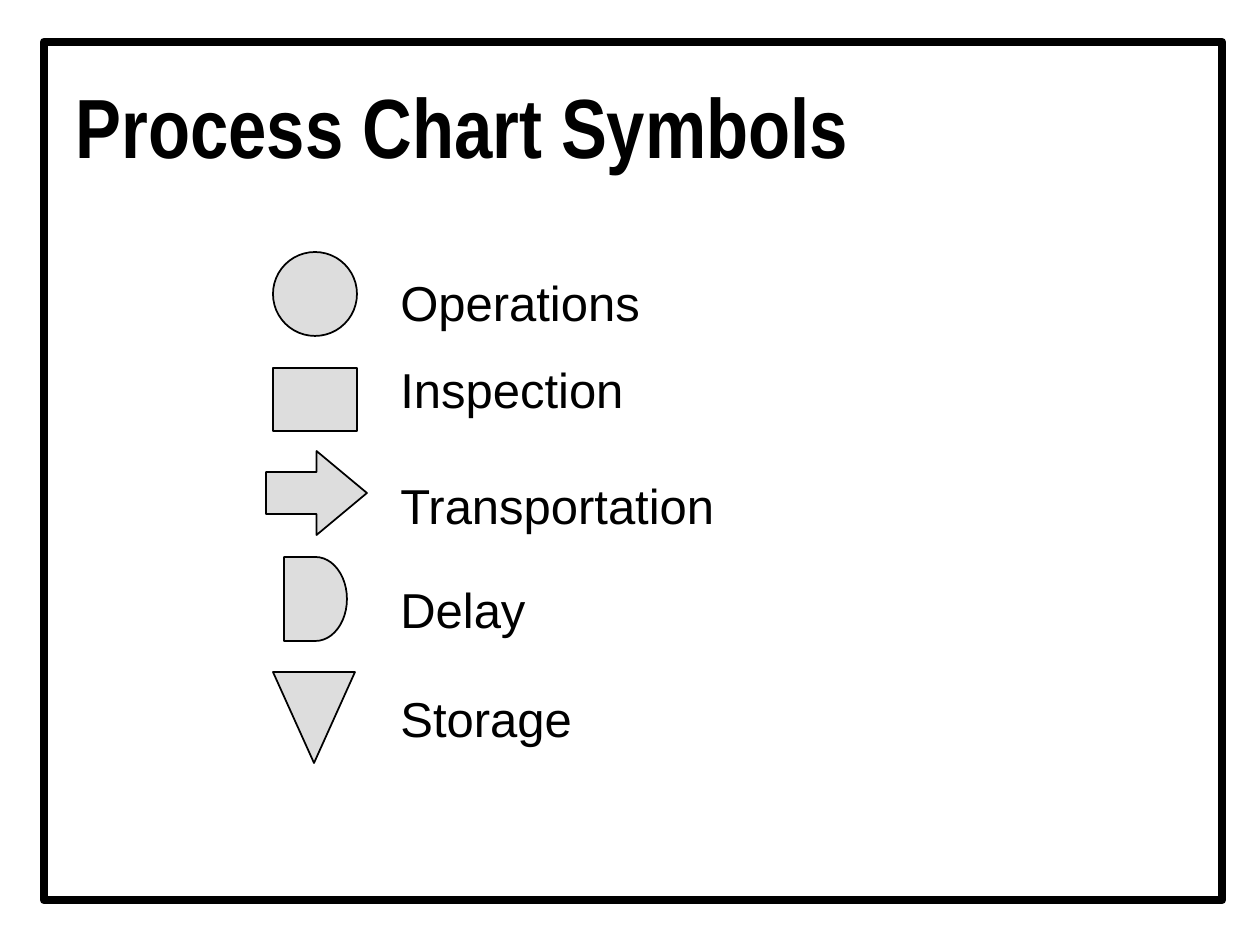
"""Builds the slide of process chart symbols."""
import dataclasses

import pptx
import pptx.dml.color
import pptx.enum.shapes
import pptx.enum.text
import pptx.util

PX = 914400 / 126
SHAPE = pptx.enum.shapes.MSO_SHAPE
ALIGN = pptx.enum.text.PP_ALIGN
ANCHOR = pptx.enum.text.MSO_ANCHOR
AUTO = pptx.enum.text.MSO_AUTO_SIZE
LABEL_LEFT, LABEL_HEIGHT = 388, 73


@dataclasses.dataclass(frozen=True)
class Theme:
    """Colours, fonts and sizes of the slide."""
    ink: str = "000000"
    symbol: str = "DDDDDD"
    title_font: str = "Arial Narrow"
    label_font: str = "Arial"
    title_size: int = 48
    label_size: int = 28
    frame_line: int = 5
    symbol_line: int = 1


THEME = Theme()

SYMBOLS = [
    ("Operations", SHAPE.OVAL, (273, 252, 84, 84), 0, 266, 267),
    ("Inspection", SHAPE.RECTANGLE, (273, 368, 84, 63), 0, 353, 251),
    ("Transportation", SHAPE.RIGHT_ARROW, (266, 451, 101, 84), 0, 469, 344),
    ("Delay", SHAPE.FLOWCHART_DELAY, (284, 557, 63, 84), 0, 573, 152),
    ("Storage", SHAPE.ISOSCELES_TRIANGLE, (273, 672, 82, 91), 180, 682, 198),
]


def emu(*lengths):
    """Turn px lengths into EMU."""
    return [pptx.util.Emu(round(n * PX)) for n in lengths]


def rgb(value):
    """Return the colour for a hex string."""
    return pptx.dml.color.RGBColor.from_string(value)


def apply(obj, fmt):
    """Set the attributes named in a dict of format values."""
    for name, value in fmt.items():
        setattr(obj, name, value)


def write(tf, text, font, frame_fmt, para_fmt):
    """Write one formatted paragraph into a text frame."""
    apply(tf, frame_fmt)
    p = tf.paragraphs[0]
    apply(p, para_fmt)
    r = p.add_run()
    r.text = text
    apply(r.font, font)
    r.font.color.rgb = rgb(THEME.ink)


def add_title(s, text, box):
    """Place and format the title placeholder."""
    sp = s.shapes.title
    apply(sp, dict(zip(("left", "top", "width", "height"), emu(*box))))
    font = {"name": THEME.title_font, "size": pptx.util.Pt(THEME.title_size), "bold": True}
    frame_fmt = {"vertical_anchor": ANCHOR.MIDDLE, "auto_size": AUTO.NONE, "word_wrap": True}
    write(sp.text_frame, text, font, frame_fmt,
          {"alignment": ALIGN.LEFT, "line_spacing": 0.7})


def add_shape(s, kind, box, line, fill=None, turn=0):
    """Add an outlined preset shape, filled if a colour is given."""
    sp = s.shapes.add_shape(kind, *emu(*box))
    apply(sp, {"rotation": turn})
    sp.shadow.inherit = False
    if fill:
        sp.fill.solid()
        sp.fill.fore_color.rgb = rgb(fill)
    else:
        sp.fill.background()
    sp.line.color.rgb = rgb(THEME.ink)
    sp.line.width = pptx.util.Pt(line)
    return sp


def add_label(s, text, top, width):
    """Add the name of a symbol."""
    sp = s.shapes.add_textbox(*emu(LABEL_LEFT, top, width, LABEL_HEIGHT))
    font = {"name": THEME.label_font, "size": pptx.util.Pt(THEME.label_size)}
    write(sp.text_frame, text, font,
          {"word_wrap": False, "auto_size": AUTO.SHAPE_TO_FIT_TEXT},
          {"alignment": ALIGN.LEFT})


def main():
    """Build and save the slide."""
    prs = pptx.Presentation()
    prs.slide_width, prs.slide_height = emu(1260, 945)
    s = prs.slides.add_slide(prs.slide_layouts[5])
    add_shape(s, SHAPE.RECTANGLE, (44, 42, 1178, 858), THEME.frame_line)
    add_title(s, "Process Chart Symbols", (63, 58, 955, 158))
    for text, kind, box, turn, top, width in SYMBOLS:
        sp = add_shape(s, kind, box, THEME.symbol_line, THEME.symbol, turn)
        if kind == SHAPE.RIGHT_ARROW:
            sp.adjustments[1] = 0.6
        add_label(s, text, top, width)
    prs.save("out.pptx")


if __name__ == "__main__":
    main()
